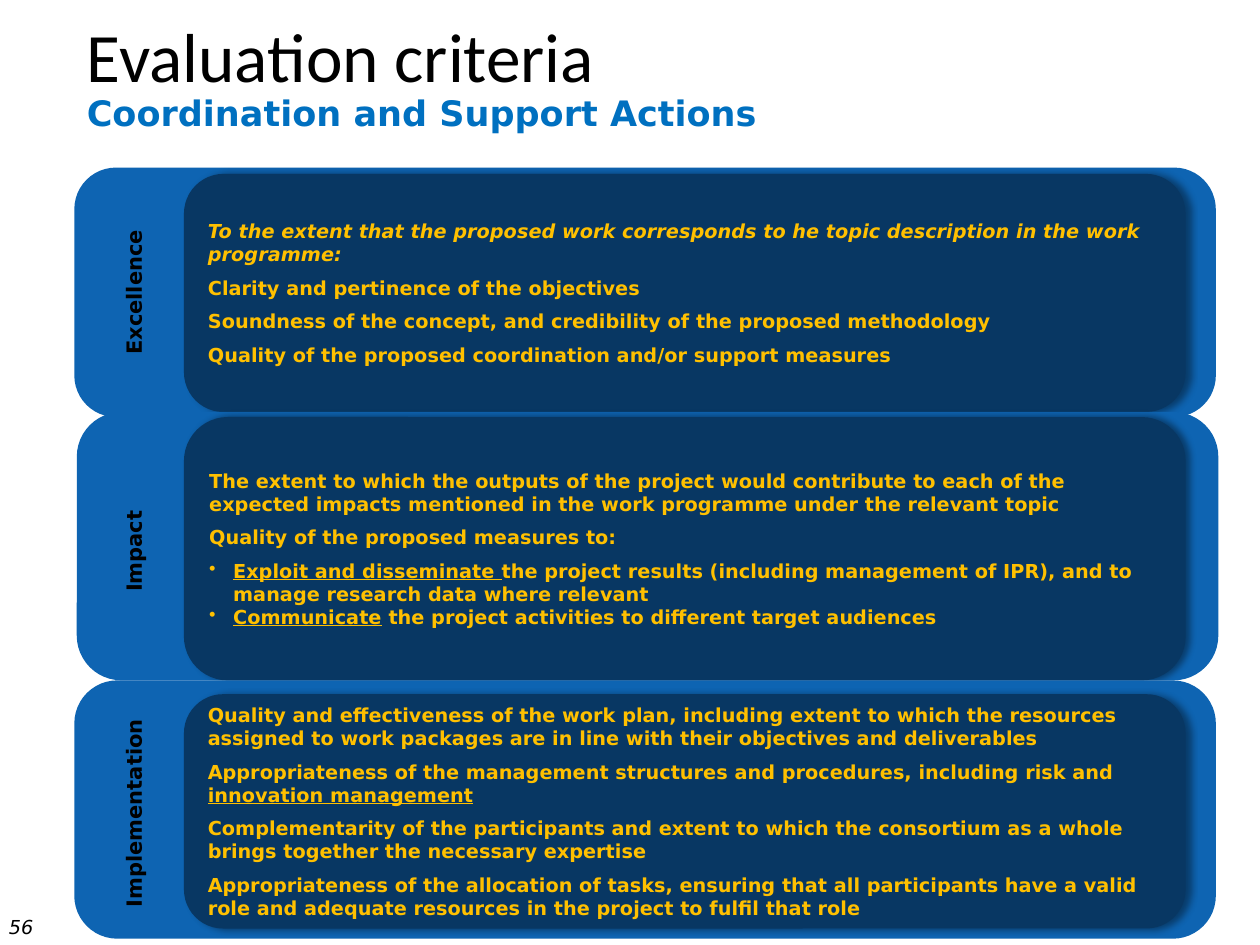
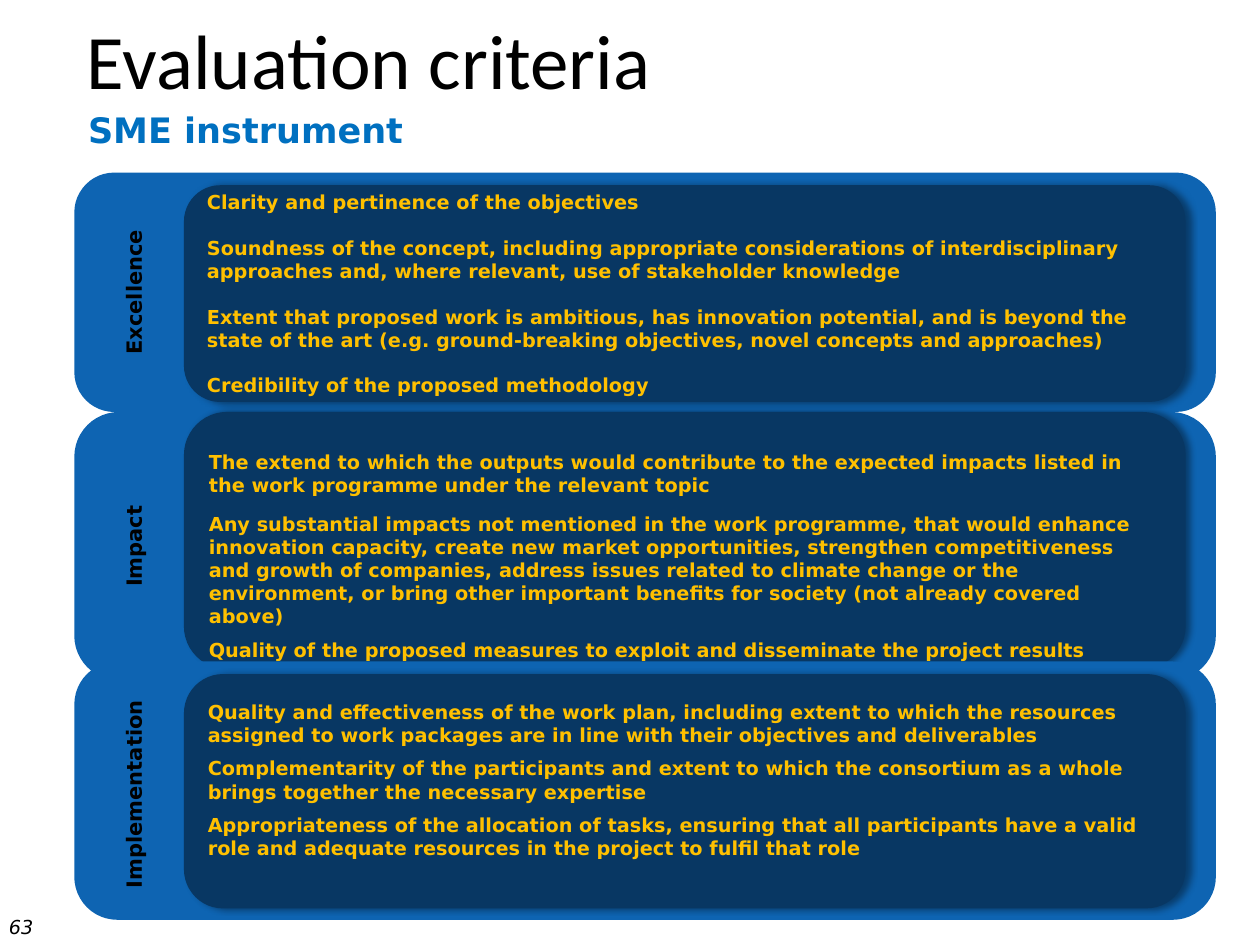
from lxml import etree
from pptx import Presentation
from pptx.dml.color import RGBColor
from pptx.enum.shapes import MSO_SHAPE
from pptx.enum.text import MSO_ANCHOR, MSO_AUTO_SIZE, PP_ALIGN
from pptx.oxml import parse_xml
from pptx.oxml.ns import nsdecls, qn
from pptx.util import Inches, Pt

ROUNDED = MSO_SHAPE.ROUNDED_RECTANGLE
TOP, MIDDLE, BOTTOM = MSO_ANCHOR.TOP, MSO_ANCHOR.MIDDLE, MSO_ANCHOR.BOTTOM
LEFT, CENTER = PP_ALIGN.LEFT, PP_ALIGN.CENTER
NO_RESIZE = MSO_AUTO_SIZE.NONE

BLACK = RGBColor(0x00, 0x00, 0x00)
BAND_BLUE = RGBColor(0x0E, 0x64, 0xB2)
CORE_NAVY = RGBColor(0x08, 0x37, 0x63)
SUBTITLE_BLUE = RGBColor(0x00, 0x70, 0xC0)
AMBER = RGBColor(0xFF, 0xC0, 0x00)
TITLE_FONT, BODY_FONT = "Calibri", "DejaVu Sans"

BAND_WIDTH = 9.06
CORE_LEFT, CORE_WIDTH = 1.46, 7.95
LABEL_LEFT, LABEL_WIDTH = 0.91, 0.39
BULLET_INDENT = 0.19
INSET = 0.05
BLANK_LINE = 12.8

WORK_PLAN = ("Quality and effectiveness of the work plan, including extent to which the resources "
             "assigned to work packages are in line with their objectives and deliverables")
COMPLEMENTARITY = ("Complementarity of the participants and extent to which the consortium as a whole "
                   "brings together the necessary expertise")
ALLOCATION = ("Appropriateness of the allocation of tasks, ensuring that all participants have a valid "
              "role and adequate resources in the project to fulfil that role")


def item(*runs, before=6, bullet=False):
    """Describe one criterion; each run is plain text or a (text, style) pair."""
    pairs = [(run, "") if isinstance(run, str) else run for run in runs]
    return {"runs": pairs, "before": before, "bullet": bullet}


PAGES = [
    {
        "number": "56", "title": "Evaluation criteria", "title_size": 39.6, "title_height": 0.63,
        "subtitle": "Coordination and Support Actions", "subtitle_at": (0.59, 0.68),
        "bands": [
            {"label": "Excellence", "band": (0.59, 1.33, 1.98), "core": (1.38, 1.89), "items": [
                item(("To the extent that the proposed work corresponds to he topic description "
                      "in the work programme:", "italic")),
                item("Clarity and pertinence of the objectives"),
                item("Soundness of the concept, and credibility of the proposed methodology"),
                item("Quality of the proposed coordination and/or support measures"),
            ]},
            {"label": "Impact", "band": (0.61, 3.27, 2.13), "core": (3.31, 2.09),
             "label_top": 3.31, "items": [
                item("The extent to which the outputs of the project would contribute to each of the "
                     "expected impacts mentioned in the work programme under the relevant topic"),
                item("Quality of the proposed measures to:"),
                item(("Exploit and disseminate ", "underline"),
                     "the project results (including management of IPR), and to manage research "
                     "data where relevant", bullet=True),
                item(("Communicate", "underline"),
                     " the project activities to different target audiences", before=0, bullet=True),
            ]},
            {"label": "Implementation ", "band": (0.59, 5.4, 2.05), "core": (5.51, 1.86), "items": [
                item(WORK_PLAN),
                item("Appropriateness of the management structures and procedures, including risk and ",
                     ("innovation management", "underline")),
                item(COMPLEMENTARITY),
                item(ALLOCATION),
            ]},
        ],
    },
    {
        "number": "63", "title": "Evaluation criteria", "title_size": 44, "title_height": 1.02,
        "subtitle": "SME instrument", "subtitle_at": (0.6, 0.81),
        "bands": [
            {"label": "Excellence", "band": (0.59, 1.37, 1.9), "core": (1.47, 1.72), "items": [
                item("Clarity and pertinence of the objectives"),
                item("Soundness of the concept, including appropriate considerations of "
                     "interdisciplinary approaches and, where relevant, use of stakeholder knowledge",
                     before=BLANK_LINE),
                item("Extent that proposed work is ambitious, has innovation potential, and is beyond "
                     "the state of the art (e.g. ground-breaking objectives, novel concepts and "
                     "approaches)", before=BLANK_LINE),
                item("Credibility of the proposed methodology", before=BLANK_LINE),
            ]},
            {"label": "Impact", "band": (0.59, 3.27, 2.13), "core": (3.27, 2.04),
             "extra_top": 0.24, "items": [
                item("The extend to which the outputs would contribute to the expected impacts listed "
                     "in the work programme under the relevant topic"),
                item("Any substantial impacts not mentioned in the work programme, that would enhance "
                     "innovation capacity, create new market opportunities, strengthen "
                     "competitiveness and growth of companies, address issues related to climate "
                     "change or the environment, or bring other important benefits for society "
                     "(not already covered above)", before=9),
                item("Quality of the proposed measures to exploit and disseminate the project results"),
            ]},
            {"label": "Implementation ", "band": (0.59, 5.25, 2.05), "core": (5.35, 1.86),
             "extra_bottom": 0.18,
             "items": [item(WORK_PLAN), item(COMPLEMENTARITY), item(ALLOCATION)]},
        ],
    },
]


def add_span(para, text, size, color, font=BODY_FONT, bold=None, italic=None, underline=None):
    """Append one formatted run."""
    span = para.add_run()
    span.text = text
    span.font.name, span.font.size = font, Pt(size)
    span.font.color.rgb = color
    span.font.bold, span.font.italic, span.font.underline = bold, italic, underline


def add_text(shapes, place, text, size, color, align=LEFT, anchor=TOP, wrap=True, **style):
    """Add a one-paragraph text box and return it."""
    box = shapes.add_textbox(*map(Inches, place))
    frame = box.text_frame
    frame.word_wrap, frame.vertical_anchor = wrap, anchor
    para = frame.paragraphs[0]
    para.alignment = align
    add_span(para, text, size, color, **style)
    return box


def add_rounded(shapes, place, color):
    """Add a borderless rounded rectangle."""
    box = shapes.add_shape(ROUNDED, *map(Inches, place))
    box.shadow.inherit = False
    box.fill.solid()
    box.fill.fore_color.rgb = color
    box.line.fill.background()
    return box


def add_side_shadow(box):
    """Cast a soft shadow to the right of a shape."""
    effects = box._element.spPr.find(qn("a:effectLst"))
    effects.append(parse_xml(
        f'<a:outerShdw {nsdecls("a")} blurRad="{Pt(4)}" dist="{Pt(3)}" dir="0" algn="l" '
        'rotWithShape="0"><a:srgbClr val="000000"><a:alpha val="40000"/></a:srgbClr>'
        '</a:outerShdw>'))


def add_bullet(para):
    """Give a paragraph a hanging round bullet."""
    properties = para._p.get_or_add_pPr()
    properties.set("marL", str(Inches(BULLET_INDENT)))
    properties.set("indent", str(-Inches(BULLET_INDENT)))
    etree.SubElement(properties, qn("a:buChar")).set("char", "•")


def fill_core(box, band):
    """Write the criteria of one band."""
    frame = box.text_frame
    frame.word_wrap, frame.vertical_anchor = True, MIDDLE
    frame.margin_top = Inches(INSET + band.get("extra_top", 0))
    frame.margin_bottom = Inches(INSET + band.get("extra_bottom", 0))
    for index, criterion in enumerate(band["items"]):
        para = frame.add_paragraph() if index else frame.paragraphs[0]
        if criterion["bullet"]:
            add_bullet(para)
        para.alignment = LEFT
        para.space_before = Pt(criterion["before"] if index else 0)
        for text, style in criterion["runs"]:
            add_span(para, text, 11, AMBER, bold=True,
                     italic=style == "italic", underline=style == "underline")


def add_band(page, band):
    """Add a grouped band: outer panel, criteria core and upright label."""
    shapes = page.shapes.add_group_shape().shapes
    left, top, height = band["band"]
    core_top, core_height = band["core"]
    add_rounded(shapes, (left, top, BAND_WIDTH, height), BAND_BLUE)
    core = add_rounded(shapes, (CORE_LEFT, core_top, CORE_WIDTH, core_height), CORE_NAVY)
    add_side_shadow(core)
    fill_core(core, band)
    label_place = (LABEL_LEFT, band.get("label_top", top), LABEL_WIDTH, height)
    label = add_text(shapes, label_place, band["label"], 12, BLACK, CENTER, wrap=False, bold=True)
    label.text_frame._txBody.bodyPr.set("vert", "vert270")


def set_title(page, content):
    """Place and format the title placeholder."""
    title = page.shapes.title
    title.left, title.top = Inches(0.59), Inches(0.13)
    title.width, title.height = Inches(9), Inches(content["title_height"])
    frame = title.text_frame
    frame.auto_size, frame.vertical_anchor, frame.word_wrap = NO_RESIZE, TOP, True
    para = frame.paragraphs[0]
    para.alignment, para.line_spacing = LEFT, 0.9
    add_span(para, content["title"], content["title_size"], BLACK, TITLE_FONT)


def add_page(deck, content):
    """Build one criteria slide."""
    page = deck.slides.add_slide(deck.slide_layouts[5])
    set_title(page, content)
    number = add_text(page.shapes, (0, 7.11, 0.49, 0.39), content["number"], 11, BLACK,
                      anchor=BOTTOM, italic=True)
    number.text_frame.margin_left = Inches(0.07)
    add_text(page.shapes, (*content["subtitle_at"], 9.29, 0.44), content["subtitle"], 20,
             SUBTITLE_BLUE, bold=True)
    for band in content["bands"]:
        add_band(page, band)


def main():
    """Build and save the deck."""
    deck = Presentation()
    deck.slide_width, deck.slide_height = Inches(10), Inches(7.5)
    for content in PAGES:
        add_page(deck, content)
    deck.save("out.pptx")


if __name__ == "__main__":
    main()
